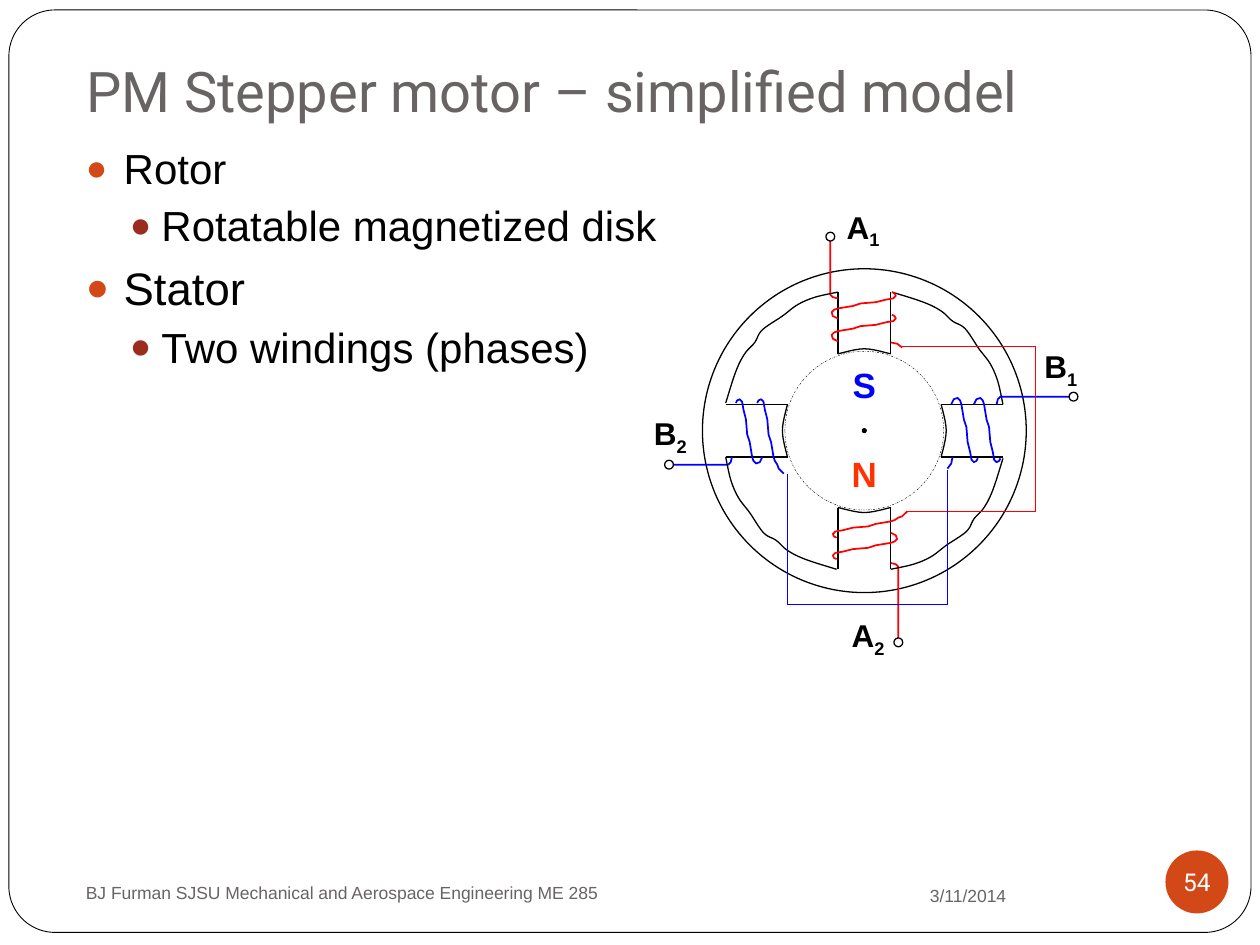
from lxml.etree import SubElement as Sub
from pptx import Presentation
from pptx.dml.color import RGBColor as RGB
from pptx.enum.dml import MSO_LINE as Dash
from pptx.enum.shapes import MSO_CONNECTOR as Link, MSO_SHAPE as Kind
from pptx.enum.text import MSO_ANCHOR as Anchor, MSO_AUTO_SIZE as Fit, PP_ALIGN as Align
from pptx.oxml.ns import qn
from pptx.util import Inches, Pt

COLS, ROWS = 120, 90
CELL = Inches(10) / COLS
HUES = {"ink": "000000", "paper": "FFFFFF", "grey": "696464", "orange": "D34817",
        "rust": "9B2D1F", "red": "FF0000", "blue": "0000FF", "north": "FF3300"}

# Parts of the bottom pole, from the centre of the motor; quarter turns give the rest
RIM = [(.22, -1.1), (.47, -1.02), (.61, -.95), (.7, -.87), (.8, -.81),
       (.91, -.65), (1, -.53), (1.06, -.39), (1.1, -.21)]
FACE = [(-.21, .61), (0, .65), (.21, .61)]
WRAP = [(0, .08), (-.12, .1), (-.18, .12), (-.3, .13), (-.38, .15),
        (-.44, .16), (-.46, .18), (-.45, .2), (-.43, .21)]
LOOP = [(0, 0), (.04, .02), (.05, .05), (.03, .07)] + WRAP
EXIT = [(.13, 0), (.09, .04), (.06, .05), (.03, .07)] + WRAP
HOOK = [(0, 0), (.04, .01), (.06, .03), (.06, .06)]
STUB = [(-.21, .7), (-.26, .69), (-.3, .66)]

# Hue, rows of full loops, row of the exit loop, reach of the terminal
POLES = [("red", [.81], .64, 1.68), ("blue", [.81], .64, 1.55),
         ("red", [.71, .89], None, 1.54), ("blue", [.69, .87], None, 1.66)]
JUMPS = [("red", [(.3, -.67), (1.36, -.67), (1.36, .64), (.33, .64)]),
         ("blue", [(.66, .31), (.66, 1.38), (-.61, 1.38), (-.61, .34)])]
TAGS = [("A", "1", -.24, -1.82), ("B", "1", 1.33, -.71),
        ("A", "2", -.2, 1.42), ("B", "2", -1.77, -.18)]


def hue(name):
    return RGB.from_string(HUES[name])


def grid(*box):
    return [round(n * CELL) for n in box]


def style(font, size, name, face="Arial", bold=False):
    font.size, font.name, font.bold = Pt(size), face, bold
    font.color.rgb = hue(name)


def paint(shape, fill=None, line=None, width=.75):
    shape.shadow.inherit = False
    if fill:
        shape.fill.solid()
        shape.fill.fore_color.rgb = hue(fill)
    else:
        shape.fill.background()
    if line:
        shape.line.color.rgb = hue(line)
        shape.line.width = Pt(width)
    else:
        shape.line.fill.background()


def label(shapes, box, text, size, name, align=Align.LEFT, bold=False, wrap=True,
          anchor=Anchor.TOP):
    frame = shapes.add_textbox(*box).text_frame
    frame.word_wrap, frame.vertical_anchor = wrap, anchor
    para = frame.paragraphs[0]
    para.text, para.alignment = text, align
    style(para.font, size, name, bold=bold)
    return para


def turn(points, count):
    for _ in range(count):
        points = [(-y, x) for x, y in points]
    return points


def shift(points, x, y):
    return [(x + a, y + b) for a, b in points]


def smooth(points, steps=6):
    """Curve through all the points (Catmull-Rom)."""
    ends = [points[0], *points, points[-1]]
    curve = [points[0]]
    for four in zip(ends, ends[1:], ends[2:], ends[3:]):
        for step in range(1, steps + 1):
            t = step / steps
            curve.append(tuple(
                b + t / 2 * (c - a + t * (2 * a - 5 * b + 4 * c - d + t * (3 * (b - c) + d - a)))
                for a, b, c, d in zip(*four)))
    return curve


def motor(slide, box):
    """Motor whose outer ring fills the box; the ring is 2.57 units wide."""
    left, top, wide, high = box
    unit = wide / 2.57
    shapes = slide.shapes.add_group_shape().shapes

    def spot(x, y):
        return round(left + wide / 2 + x * unit), round(top + high / 2 + y * unit)

    def area(x, y, w, h):
        return *spot(x, y), round(w * unit), round(h * unit)

    def disk(x, y, r, *look):
        shape = shapes.add_shape(Kind.OVAL, *area(x - r, y - r, 2 * r, 2 * r))
        paint(shape, *look)
        return shape

    def trace(points, name, width=.75):
        dots = [spot(*p) for p in points]
        pen = shapes.build_freeform(*dots[0])
        pen.add_line_segments(dots[1:], close=False)
        paint(pen.convert_to_shape(), None, name, width)

    def line(start, end, name):
        link = shapes.add_connector(Link.STRAIGHT, *spot(*start), *spot(*end))
        link.line.color.rgb, link.line.width = hue(name), Pt(.75)
        Sub(link.element.spPr, qn("a:effectLst"))

    def pole(count, name, loops, last, reach):
        for x in (-.21, .21):
            line(*turn([(x, 1.1), (x, .61)], count), "ink")
        trace(turn(smooth(FACE), count), "ink")
        trace(turn(smooth(RIM), count), "ink")
        wires = [shift(LOOP, .21, y) for y in loops]
        wires.append(shift(HOOK, .21, 1.05) + [(.27, reach)])
        wires.append(shift(EXIT, .21, last) if last else STUB)
        for wire in wires:
            trace(turn(wire, count), name, 1)

    disk(0, 0, 1.285, "paper", "ink")
    for count, data in enumerate(POLES):
        pole(count, *data)
    for name, points in JUMPS:
        for start, end in zip(points, points[1:]):
            line(start, end, name)
    for count, data in enumerate(POLES):
        disk(*turn([(.27, data[-1])], count)[0], .035, "paper", "ink")
    for text, sub, x, y in TAGS:
        para = label(shapes, area(x, y, .58, .41), text, 18, "ink", bold=True)
        run = para.add_run()
        run.text = sub
        run.font._element.set("baseline", "-25000")
    disk(0, 0, .015, "ink", "ink")
    disk(0, 0, .63, None, "ink", .25).line.dash_style = Dash.DASH_DOT
    for text, y, name in [("N", .34, "north"), ("S", -.37, "blue")]:
        label(shapes, area(-.2, y - .215, .4, .43), text, 20, name, Align.CENTER, True, False)


def heading(slide, box, text):
    title = slide.shapes.title
    title.left, title.top, title.width, title.height = box
    frame = title.text_frame
    frame.auto_size, frame.vertical_anchor = Fit.NONE, Anchor.BOTTOM
    frame.margin_bottom = Inches(.1)
    para = frame.paragraphs[0]
    para.text, para.alignment = text, Align.LEFT
    style(para.font, 32, "grey", "Roboto")


def points(slide, box, items):
    frame = slide.shapes.add_textbox(*box).text_frame
    frame.word_wrap = True
    looks = [(.3, .3, 5.8, "orange"), (.6, .25, 3.7, "rust")]
    for i, (level, size, text) in enumerate(items):
        para = frame.add_paragraph() if i else frame.paragraphs[0]
        margin, hang, gap, name = looks[level]
        para.text, para.level = text, level
        para.space_before = Pt(gap if i else 0)
        props = para._p.get_or_add_pPr()
        props.set("marL", str(Inches(margin)))
        props.set("indent", str(-Inches(hang)))
        Sub(Sub(props, qn("a:buClr")), qn("a:srgbClr"), val=HUES[name])
        Sub(props, qn("a:buSzPct"), val="85000")
        Sub(props, qn("a:buFont"), typeface="Arial")
        Sub(props, qn("a:buChar"), char="●")
        style(para.font, size, "ink")


def border(slide, box):
    shape = slide.shapes.add_shape(Kind.ROUNDED_RECTANGLE, *box)
    shape.adjustments[0] = .05
    paint(shape, "paper", "ink", .5)
    slide.shapes.title.element.addprevious(shape.element)


def badge(slide, box, text):
    shape = slide.shapes.add_shape(Kind.OVAL, *box)
    paint(shape, "orange")
    frame = shape.text_frame
    frame.margin_left = frame.margin_right = frame.margin_top = frame.margin_bottom = 0
    frame.word_wrap, frame.vertical_anchor = False, Anchor.MIDDLE
    para = frame.paragraphs[0]
    para.text, para.alignment = text, Align.CENTER
    style(para.font, 14, "paper", "Roboto")


def main():
    deck = Presentation()
    deck.slide_width, deck.slide_height = grid(COLS, ROWS)
    slide = deck.slides.add_slide(deck.slide_layouts[5])
    border(slide, grid(.85, .95, 118.3, 87.85))
    heading(slide, grid(7, 3.6, 107, 9.4), "PM Stepper motor – simplified model")
    label(slide.shapes, grid(81, 83.5, 16, 3.5), "3/11/2014", 10, "grey",
          Align.RIGHT, anchor=Anchor.MIDDLE)
    label(slide.shapes, grid(7, 83, 59, 4),
          "BJ Furman SJSU Mechanical and Aerospace Engineering ME 285", 10, "grey",
          anchor=Anchor.MIDDLE)
    badge(slide, grid(111, 81, 6, 6), "54")
    points(slide, grid(7, 13, 107, 66), [
        (0, 24, "Rotor"), (1, 24, "Rotatable magnetized disk"),
        (0, 26, "Stator"), (1, 24, "Two windings (phases)")])
    motor(slide, grid(66.9, 25.6, 30.84, 30.84))
    deck.save("out.pptx")


if __name__ == "__main__":
    main()
